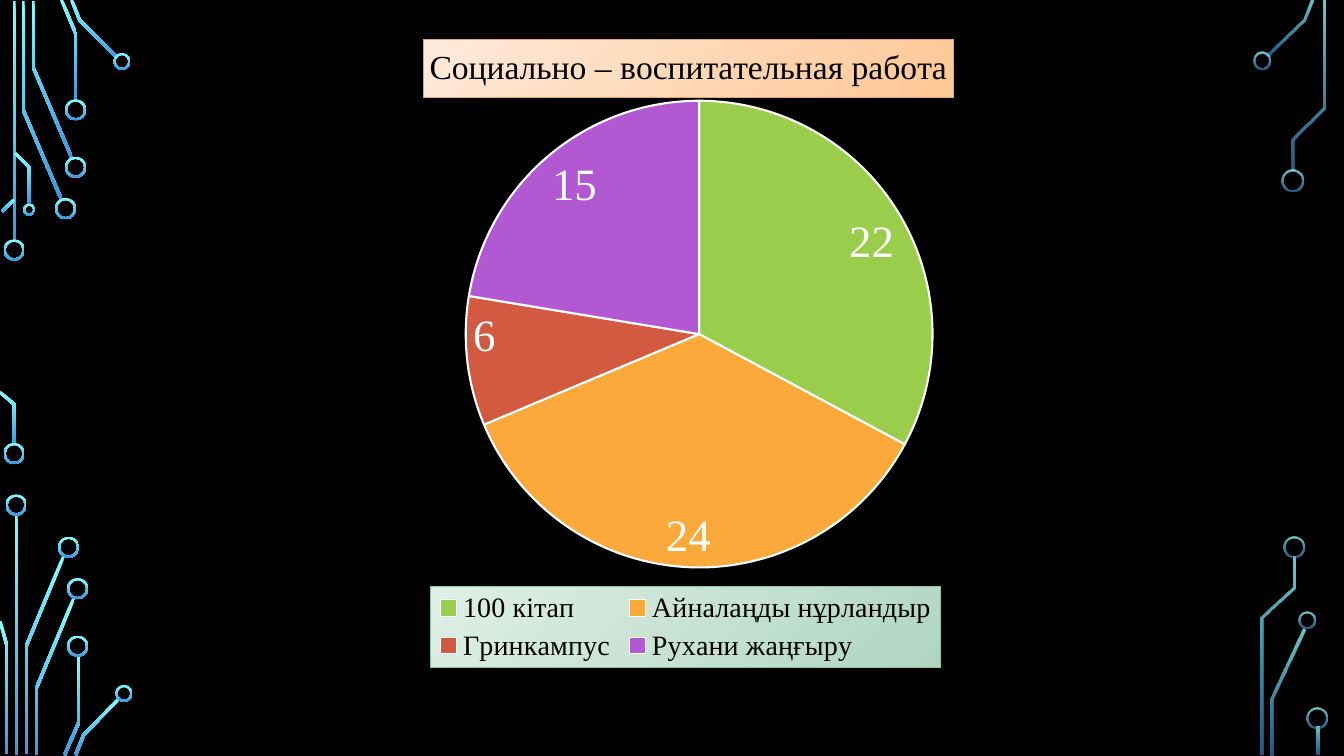
from math import hypot

from lxml.etree import fromstring
from pptx import Presentation
from pptx.chart.data import CategoryChartData
from pptx.dml.color import RGBColor
from pptx.enum.chart import XL_CHART_TYPE, XL_LABEL_POSITION, XL_LEGEND_POSITION
from pptx.enum.shapes import MSO_SHAPE
from pptx.oxml import parse_xml
from pptx.oxml.ns import nsdecls, qn
from pptx.util import Inches, Pt

FONT = "Times New Roman"
COLORS = {
    "back": "000000", "dark": "000000", "light": "FFFFFF",
    "glow": "82FFFF", "deep": "3D97DE",
    "peach": "FFEADB", "apricot": "FFC794", "sand": "D9A97C",
    "mint": "DFEFE6", "sage": "B0D6C2", "fern": "8FC0A6",
}
SLICES = [
    ("100 кітап", 22, "9ACD4C"),
    ("Айналаңды нұрландыр", 24, "FAA93A"),
    ("Гринкампус", 6, "D35940"),
    ("Рухани жаңғыру", 15, "B258D3"),
]
WIRE = 0.03
RIM = 0.02

# Wires are centre lines; rings are centre x, centre y, diameter.
LEFT_WIRES = [
    [(0.14, 0.01), (0.14, 2.4)],
    [(0.23, 0.01), (0.23, 1.09), (0.61, 1.98)],
    [(0.33, 0.01), (0.33, 0.67), (0.71, 1.56)],
    [(0.61, 0), (0.75, 0.33), (0.75, 1)],
    [(0.71, 0), (0.79, 0.2), (1.16, 0.57)],
    [(0.02, 2.1), (0.14, 1.98)],
    [(0, 3.89), (0.14, 4.01), (0.14, 4.41)],
    [(0.15, 1.52), (0.29, 1.66), (0.29, 2.03)],
    [(0.16, 5.1), (0.16, 7.49)],
    [(0.26, 7.48), (0.26, 6.41), (0.63, 5.52)],
    [(0.07, 7.48), (0.07, 6.41), (0, 6.16)],
    [(0.36, 7.49), (0.36, 6.83), (0.73, 5.94)],
    [(0.64, 7.49), (0.78, 7.17), (0.78, 6.5)],
    [(0.75, 7.49), (0.83, 7.29), (1.18, 6.93)],
]
LEFT_RINGS = [
    (0.14, 2.48, 0.21), (0.14, 4.5, 0.21), (0.65, 2.07, 0.21),
    (0.75, 1.66, 0.21), (0.75, 1.09, 0.21), (1.21, 0.61, 0.17),
    (0.29, 2.08, 0.12), (0.16, 5.01, 0.21), (0.68, 5.43, 0.21),
    (0.77, 5.84, 0.21), (0.77, 6.41, 0.21), (1.23, 6.88, 0.17),
]
RIGHT_WIRES = [
    [(0.17, 0.55), (0.53, 0.2), (0.61, 0)],
    [(0.22, 7.49), (0.22, 6.93), (0.53, 6.24)],
    [(0.42, 1.69), (0.42, 1.38), (0.73, 1.07), (0.73, 0.01)],
    [(0.12, 7.49), (0.12, 6.13), (0.43, 5.83), (0.43, 5.52)],
    [(0.67, 7.21), (0.67, 7.49)],
]
RIGHT_RINGS = [
    (0.12, 0.6, 0.17), (0.42, 1.79, 0.21), (0.56, 6.15, 0.17),
    (0.43, 5.43, 0.21), (0.66, 7.12, 0.21),
]


def color(name):
    return RGBColor.from_string(COLORS[name])


def paint(shape, alphas):
    """Fill top to bottom from glow to deep, with opacity in percent."""
    shape.shadow.inherit = False
    shape.line.fill.background()
    shape.fill.gradient()
    shape.fill.gradient_angle = 270
    for stop, name in zip(shape.fill.gradient_stops, ("glow", "deep")):
        stop.color.rgb = color(name)
    for tint, alpha in zip(shape.element.iter(qn("a:srgbClr")), alphas):
        if alpha < 100:
            tint.append(parse_xml(
                f'<a:alpha {nsdecls("a")} val="{alpha * 1000}"/>'))


def edge(points, half):
    """Shift a centre line sideways, with mitred corners."""
    norms = []
    for (x1, y1), (x2, y2) in zip(points, points[1:]):
        size = hypot(x2 - x1, y2 - y1)
        norms.append(((y1 - y2) / size, (x2 - x1) / size))
    befores, afters = norms[:1] + norms, norms + norms[-1:]
    side = []
    for (x, y), (ax, ay), (bx, by) in zip(points, befores, afters):
        scale = half / (1 + ax * bx + ay * by)
        side.append((x + (ax + bx) * scale, y + (ay + by) * scale))
    return side


def circuit(slide, left, top, wires, rings, alphas):
    def spot(point):
        return Inches(left + point[0]), Inches(top + point[1])

    for wire in wires:
        outline = edge(wire, WIRE / 2) + edge(wire, -WIRE / 2)[::-1]
        corners = [spot(point) for point in outline]
        build = slide.shapes.build_freeform(*corners[0], scale=1.0)
        build.add_line_segments(corners[1:], close=True)
        paint(build.convert_to_shape(), alphas)
    for x, y, size in rings:
        ring = slide.shapes.add_shape(
            MSO_SHAPE.DONUT, *spot((x - size / 2, y - size / 2)),
            Inches(size), Inches(size))
        ring.adjustments[0] = RIM / size
        paint(ring, alphas)


def layout(box, frame, inner=False):
    """Manual chart layout for a box in inches within the chart frame."""
    left, top, wide, high = frame
    parts = [("x", (box[0] - left) / wide), ("y", (box[1] - top) / high)]
    if len(box) == 4:
        parts += [("w", box[2] / wide), ("h", box[3] / high)]
    target = '<c:layoutTarget val="inner"/>' if inner else ""
    modes = '<c:xMode val="edge"/><c:yMode val="edge"/>'
    values = "".join(f'<c:{key} val="{val:.4f}"/>' for key, val in parts)
    return parse_xml(f'<c:layout {nsdecls("c")}><c:manualLayout>{target}{modes}'
                     f'{values}</c:manualLayout></c:layout>')


def clear(part):
    for old in part.findall(qn("c:layout")):
        part.remove(old)


def panel(part, place, start, end, rim):
    """Place a title or legend and give it a gradient with a thin rim."""
    clear(part)
    over = part.find(qn("c:overlay"))
    over.addprevious(place)
    over.addnext(parse_xml(
        f'<c:spPr {nsdecls("c", "a")}><a:gradFill><a:gsLst>'
        f'<a:gs pos="0"><a:srgbClr val="{COLORS[start]}"/></a:gs>'
        f'<a:gs pos="100000"><a:srgbClr val="{COLORS[end]}"/></a:gs>'
        f'</a:gsLst><a:lin ang="2700000" scaled="0"/></a:gradFill>'
        f'<a:ln w="6350"><a:solidFill><a:srgbClr val="{COLORS[rim]}"/>'
        f'</a:solidFill></a:ln></c:spPr>'))


def style(font, size, name):
    font.name, font.size, font.bold = FONT, Pt(size), False
    font.color.rgb = color(name)


def pie(slide, frame):
    left, top, wide, high = frame
    data = CategoryChartData()
    data.categories = [name for name, _, _ in SLICES]
    data.add_series("Series 1", [value for _, value, _ in SLICES])
    chart = slide.shapes.add_chart(
        XL_CHART_TYPE.PIE, *map(Inches, frame), data).chart
    style(chart.font, 10, "light")

    chart.has_title = True
    title = chart.chart_title.text_frame.paragraphs[0]
    title.text = "Социально – воспитательная работа"
    style(title.font, 24, "dark")
    chart.has_legend = True
    legend = chart.legend
    legend.position = XL_LEGEND_POSITION.BOTTOM
    legend.include_in_layout = False
    style(legend.font, 20, "dark")

    root = chart.element
    panel(root.find(".//" + qn("c:title")),
          layout((left + 3.8, top + 0.18), frame), "peach", "apricot", "sand")
    panel(root.find(".//" + qn("c:legend")),
          layout((left + 3.87, top + 5.61, 5.06, 0.8), frame),
          "mint", "sage", "fern")
    area = root.find(".//" + qn("c:plotArea"))
    clear(area)
    area.insert(0, layout((left + 4.22, top + 0.79, 4.63, 4.63), frame, True))

    plot = chart.plots[0]
    plot.vary_by_categories = True
    for index, (_, _, tint) in enumerate(SLICES):
        form = plot.series[0].points[index].format
        form.fill.solid()
        form.fill.fore_color.rgb = RGBColor.from_string(tint)
        form.line.color.rgb = color("light")
        form.line.width = Pt(1.5)
    plot.has_data_labels = True
    labels = plot.data_labels
    labels.show_value = True
    labels.show_percentage = False
    labels.position = XL_LABEL_POSITION.INSIDE_END
    style(labels.font, 32, "light")


def main():
    deck = Presentation()
    deck.slide_width, deck.slide_height = Inches(13.33), Inches(7.5)
    slide = deck.slides.add_slide(deck.slide_layouts[6])
    slide.background.fill.solid()
    slide.background.fill.fore_color.rgb = color("back")
    circuit(slide, 0, 0, LEFT_WIRES, LEFT_RINGS, (100, 100))
    circuit(slide, 12.4, 0, RIGHT_WIRES, RIGHT_RINGS, (80, 60))
    pie(slide, (0.4, 0.21, 12.79, 6.42))
    deck.save("out.pptx")


if __name__ == "__main__":
    main()
